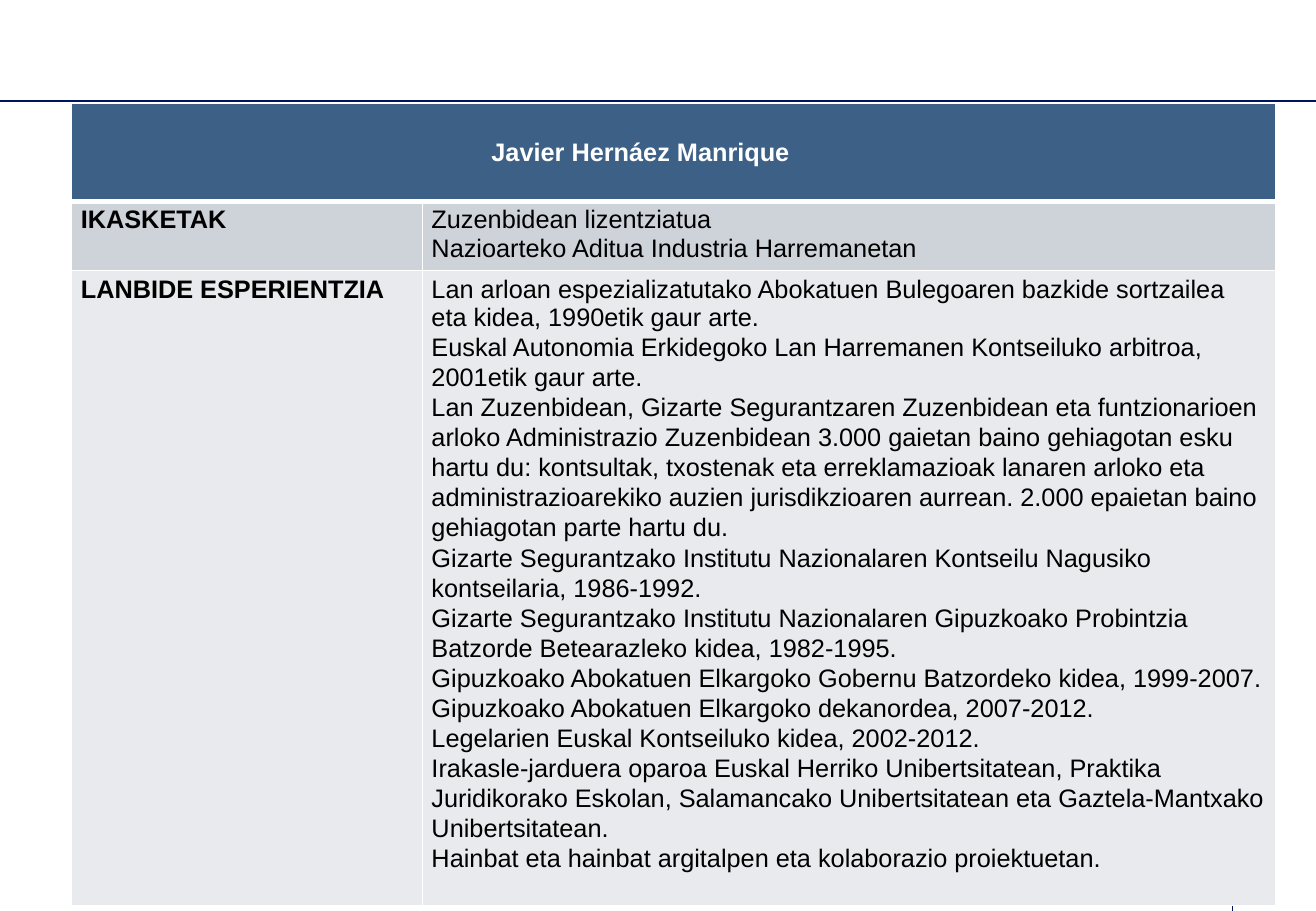
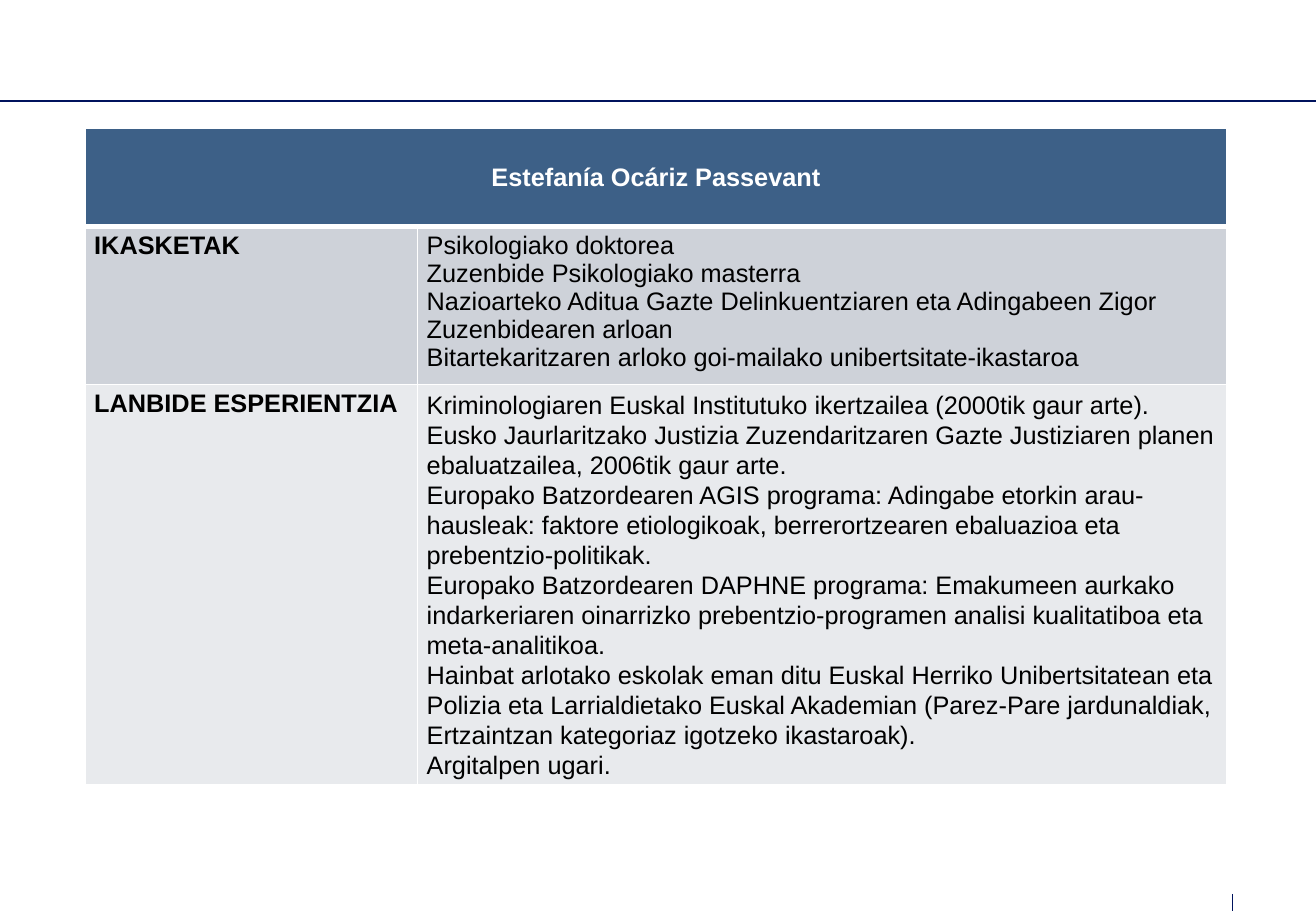
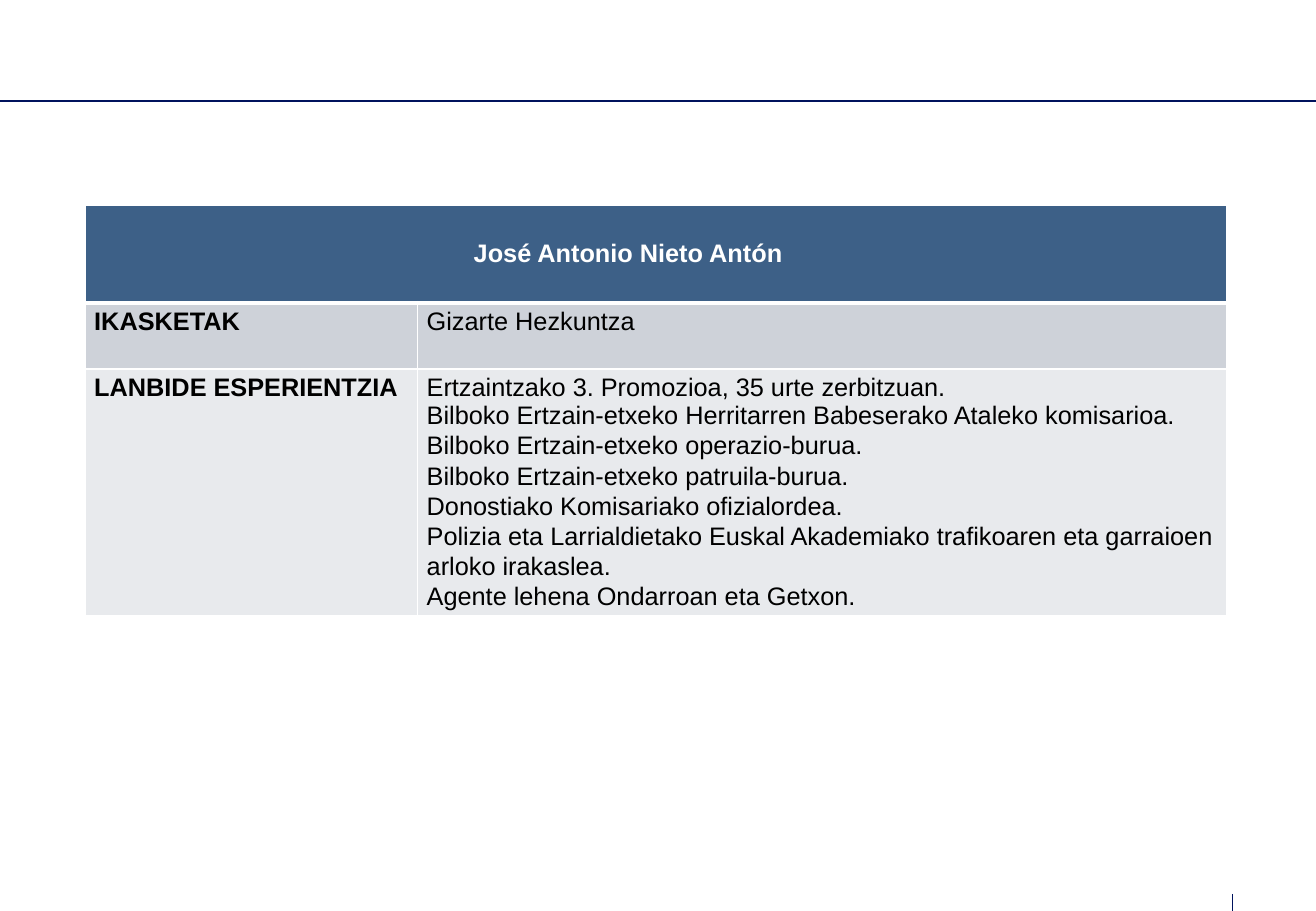
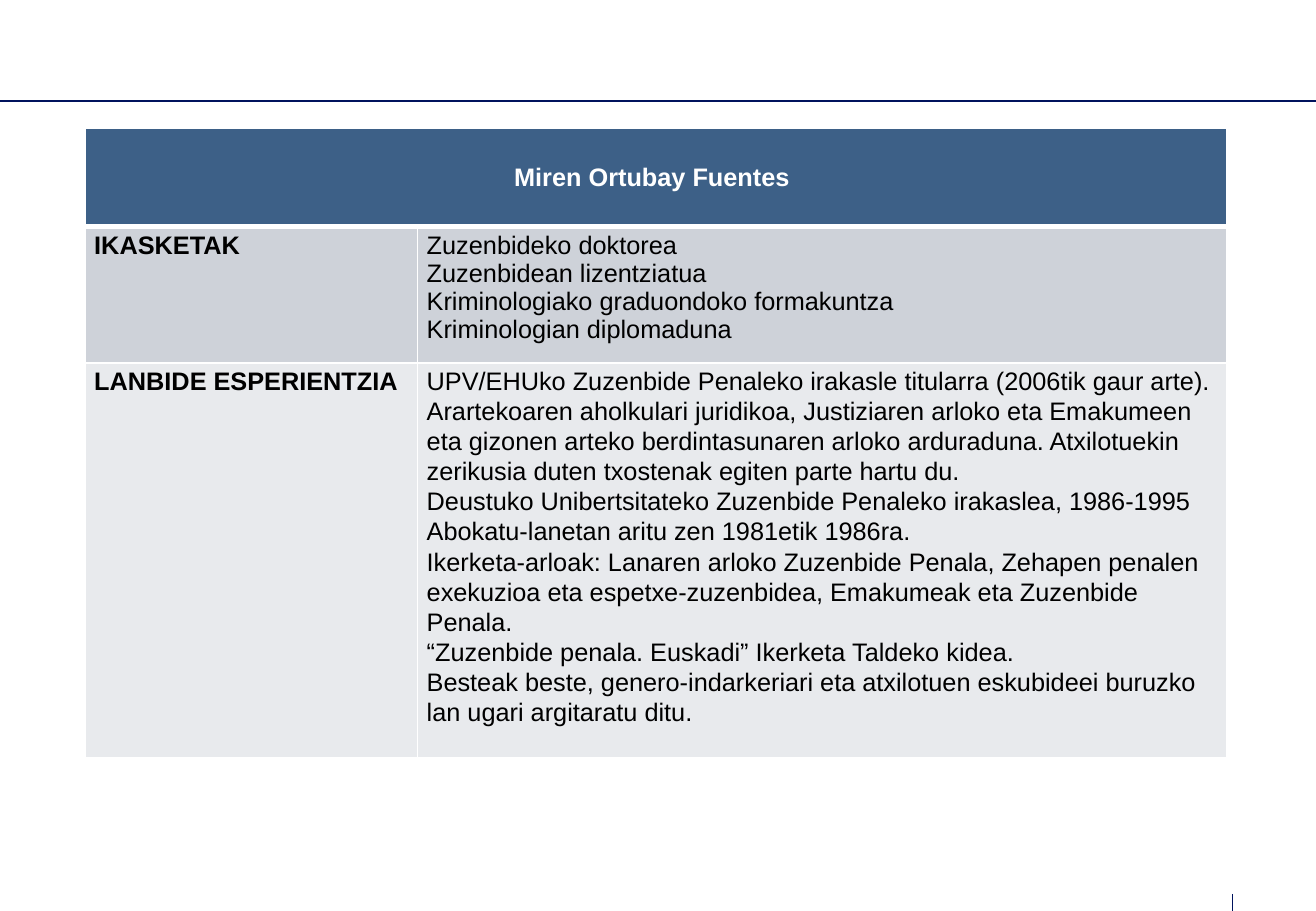
"""Build four one-table profile slides of speakers, with Basque texts."""
from lxml import etree
from pptx import Presentation
from pptx.dml.color import RGBColor
from pptx.enum.shapes import MSO_CONNECTOR
from pptx.enum.text import MSO_ANCHOR, PP_ALIGN
from pptx.oxml import parse_xml
from pptx.oxml.ns import nsdecls, qn
from pptx.util import Cm, Pt

NAVY = RGBColor(0x00, 0x13, 0x5D)
BLUE = RGBColor(0x3D, 0x60, 0x87)
GREY = RGBColor(0xCE, 0xD2, 0xD9)
PALE = RGBColor(0xE8, 0xEA, 0xED)
WHITE = RGBColor(0xFF, 0xFF, 0xFF)
BLACK = RGBColor(0x00, 0x00, 0x00)

FONT, SIZE = "Arial", Pt(15)
PAGE_WIDTH, PAGE_HEIGHT = 27.51, 19.05
RULE_TOP = 2.11
TICK_LEFT, TICK_TOP = 25.76, 18.69
SIDE_INSET, TOP_INSET = 0.19, 0.1
WIDE_SPACING = 1.07
THIN, THICK = 1, 3
HEADER_HEIGHT = 2.05
STUDIES, CAREER = "IKASKETAK", "LANBIDE ESPERIENTZIA"
STANDARD_COLUMNS = (6.95, 16.92)

PROFILES = [
    {
        "name": "Javier Hernáez Manrique",
        "corner": (1.5, 2.16),
        "columns": (7.33, 17.83),
        "heights": (1.45, 13.28),
        "name_shift": 1.38,
        "single_spaced": 1,
        "studies": [
            "Zuzenbidean lizentziatua",
            "Nazioarteko Aditua Industria Harremanetan",
        ],
        "career": [
            "Lan arloan espezializatutako Abokatuen Bulegoaren bazkide sortzailea eta kidea, 1990etik gaur arte.",
            "Euskal Autonomia Erkidegoko Lan Harremanen Kontseiluko arbitroa, 2001etik gaur arte.",
            "Lan Zuzenbidean, Gizarte Segurantzaren Zuzenbidean eta funtzionarioen arloko Administrazio "
            "Zuzenbidean 3.000 gaietan baino gehiagotan esku hartu du: kontsultak, txostenak eta "
            "erreklamazioak lanaren arloko eta administrazioarekiko auzien jurisdikzioaren aurrean. "
            "2.000 epaietan baino gehiagotan parte hartu du.",
            "Gizarte Segurantzako Institutu Nazionalaren Kontseilu Nagusiko kontseilaria, 1986-1992.",
            "Gizarte Segurantzako Institutu Nazionalaren Gipuzkoako Probintzia Batzorde Betearazleko "
            "kidea, 1982-1995.",
            "Gipuzkoako Abokatuen Elkargoko Gobernu Batzordeko kidea, 1999-2007.",
            "Gipuzkoako Abokatuen Elkargoko dekanordea, 2007-2012.",
            "Legelarien Euskal Kontseiluko kidea, 2002-2012.",
            "Irakasle-jarduera oparoa Euskal Herriko Unibertsitatean, Praktika Juridikorako Eskolan, "
            "Salamancako Unibertsitatean eta Gaztela-Mantxako Unibertsitatean.",
            "Hainbat eta hainbat argitalpen eta kolaborazio proiektuetan.",
        ],
    },
    {
        "name": "Estefanía Ocáriz Passevant",
        "corner": (1.78, 2.69),
        "columns": STANDARD_COLUMNS,
        "heights": (3.3, 8.38),
        "name_shift": 0,
        "single_spaced": 0,
        "studies": [
            "Psikologiako doktorea",
            "Zuzenbide Psikologiako masterra",
            "Nazioarteko Aditua Gazte Delinkuentziaren eta Adingabeen Zigor Zuzenbidearen arloan",
            "Bitartekaritzaren arloko goi-mailako unibertsitate-ikastaroa",
        ],
        "career": [
            "Kriminologiaren Euskal Institutuko ikertzailea (2000tik gaur arte).",
            "Eusko Jaurlaritzako Justizia Zuzendaritzaren Gazte Justiziaren planen ebaluatzailea, "
            "2006tik gaur arte.",
            "Europako Batzordearen AGIS programa: Adingabe etorkin arau-hausleak: faktore "
            "etiologikoak, berrerortzearen ebaluazioa eta prebentzio-politikak.",
            "Europako Batzordearen DAPHNE programa: Emakumeen aurkako indarkeriaren oinarrizko "
            "prebentzio-programen analisi kualitatiboa eta meta-analitikoa.",
            "Hainbat arlotako eskolak eman ditu Euskal Herriko Unibertsitatean eta Polizia eta "
            "Larrialdietako Euskal Akademian (Parez-Pare jardunaldiak, Ertzaintzan kategoriaz "
            "igotzeko ikastaroak).",
            "Argitalpen ugari.",
        ],
    },
    {
        "name": "José Antonio Nieto Antón",
        "corner": (1.78, 4.29),
        "columns": STANDARD_COLUMNS,
        "heights": (1.38, 5.14),
        "name_shift": 1.17,
        "single_spaced": 2,
        "studies": ["Gizarte Hezkuntza"],
        "career": [
            "Ertzaintzako 3. Promozioa, 35 urte zerbitzuan.",
            "Bilboko Ertzain-etxeko Herritarren Babeserako Ataleko komisarioa.",
            "Bilboko Ertzain-etxeko operazio-burua.",
            "Bilboko Ertzain-etxeko patruila-burua.",
            "Donostiako Komisariako ofizialordea.",
            "Polizia eta Larrialdietako Euskal Akademiako trafikoaren eta garraioen arloko irakaslea.",
            "Agente lehena Ondarroan eta Getxon.",
        ],
    },
    {
        "name": "Miren Ortubay Fuentes",
        "corner": (1.78, 2.69),
        "columns": STANDARD_COLUMNS,
        "heights": (2.85, 8.25),
        "name_shift": 0.17,
        "single_spaced": 1,
        "studies": [
            "Zuzenbideko doktorea",
            "Zuzenbidean lizentziatua",
            "Kriminologiako graduondoko formakuntza",
            "Kriminologian diplomaduna",
        ],
        "career": [
            "UPV/EHUko Zuzenbide Penaleko irakasle titularra (2006tik gaur arte).",
            "Arartekoaren aholkulari juridikoa, Justiziaren arloko eta Emakumeen eta gizonen arteko "
            "berdintasunaren arloko arduraduna. Atxilotuekin zerikusia duten txostenak egiten parte "
            "hartu du.",
            "Deustuko Unibertsitateko Zuzenbide Penaleko irakaslea, 1986-1995",
            "Abokatu-lanetan aritu zen 1981etik 1986ra.",
            "Ikerketa-arloak: Lanaren arloko Zuzenbide Penala, Zehapen penalen exekuzioa eta "
            "espetxe-zuzenbidea, Emakumeak eta Zuzenbide Penala.",
            "“Zuzenbide penala. Euskadi” Ikerketa Taldeko kidea.",
            "Besteak beste, genero-indarkeriari eta atxilotuen eskubideei buruzko lan ugari "
            "argitaratu ditu.",
        ],
    },
]


def add_line(slide, start, end):
    line = slide.shapes.add_connector(MSO_CONNECTOR.STRAIGHT, *map(Cm, start + end))
    line.line.color.rgb = NAVY
    line.line.width = Pt(0.75)
    etree.SubElement(line.element.spPr, qn("a:effectLst"))
    return line


def move_lines_to_layout(slide, layout):
    """Leave only the two shared lines on the layout."""
    for placeholder in list(layout.placeholders):
        layout.shapes.element.remove(placeholder.element)
    lines = [
        add_line(slide, (TICK_LEFT, TICK_TOP), (TICK_LEFT, PAGE_HEIGHT)),
        add_line(slide, (0, RULE_TOP), (PAGE_WIDTH, RULE_TOP)),
    ]
    for line in lines:
        layout.shapes.element.append(line.element)


def set_borders(cell, top, bottom):
    properties = cell._tc.get_or_add_tcPr()
    widths = {"lnL": THIN, "lnR": THIN, "lnT": top, "lnB": bottom}
    for index, (tag, width) in enumerate(widths.items()):
        properties.insert(index, parse_xml(
            f'<a:{tag} {nsdecls("a")} w="{Pt(width)}"><a:solidFill>'
            f'<a:srgbClr val="{WHITE}"/></a:solidFill></a:{tag}>'))


def fill_cell(cell, texts, color, bold=False, spacings=()):
    cell.text_frame.text = "\n".join(texts)
    for para in cell.text_frame.paragraphs:
        for span in para.runs:
            span.font.name, span.font.size = FONT, SIZE
            span.font.bold = bold
            span.font.color.rgb = color
    for para, spacing in zip(cell.text_frame.paragraphs, spacings):
        para.line_spacing = spacing


def add_profile(slide, profile):
    heights = (HEADER_HEIGHT, *profile["heights"])
    columns = profile["columns"]
    left, top = profile["corner"]
    table = slide.shapes.add_table(
        len(heights), len(columns), Cm(left), Cm(top), Cm(sum(columns)), Cm(sum(heights))).table
    table.first_row = table.horz_banding = False
    for column, width in zip(table.columns, columns):
        column.width = Cm(width)

    borders = [(THIN, THICK), (THICK, THIN), (THIN, THIN)]
    for row, height, fill, border in zip(table.rows, heights, (BLUE, GREY, PALE), borders):
        row.height = Cm(height)
        for cell in row.cells:
            cell.margin_left = cell.margin_right = Cm(SIDE_INSET)
            cell.margin_top = cell.margin_bottom = Cm(TOP_INSET)
            cell.fill.solid()
            cell.fill.fore_color.rgb = fill
            set_borders(cell, *border)

    header = table.cell(0, 0)
    header.merge(table.cell(0, 1))
    header.vertical_anchor = MSO_ANCHOR.MIDDLE
    header.margin_right = Cm(SIDE_INSET + profile["name_shift"])
    fill_cell(header, [profile["name"]], WHITE, bold=True)
    header.text_frame.paragraphs[0].alignment = PP_ALIGN.CENTER

    single = profile["single_spaced"]
    spacings = [1.0 if index < single else WIDE_SPACING
                for index in range(len(profile["career"]))]
    fill_cell(table.cell(1, 0), [STUDIES], BLACK, bold=True)
    fill_cell(table.cell(1, 1), profile["studies"], BLACK)
    fill_cell(table.cell(2, 0), [CAREER], BLACK, bold=True)
    fill_cell(table.cell(2, 1), profile["career"], BLACK, spacings=spacings)


def main():
    deck = Presentation()
    deck.slide_width, deck.slide_height = Cm(PAGE_WIDTH), Cm(PAGE_HEIGHT)
    layout = deck.slide_layouts[6]
    slides = [deck.slides.add_slide(layout) for _ in PROFILES]
    move_lines_to_layout(slides[0], layout)
    for slide, profile in zip(slides, PROFILES):
        add_profile(slide, profile)
    deck.save("out.pptx")


if __name__ == "__main__":
    main()
